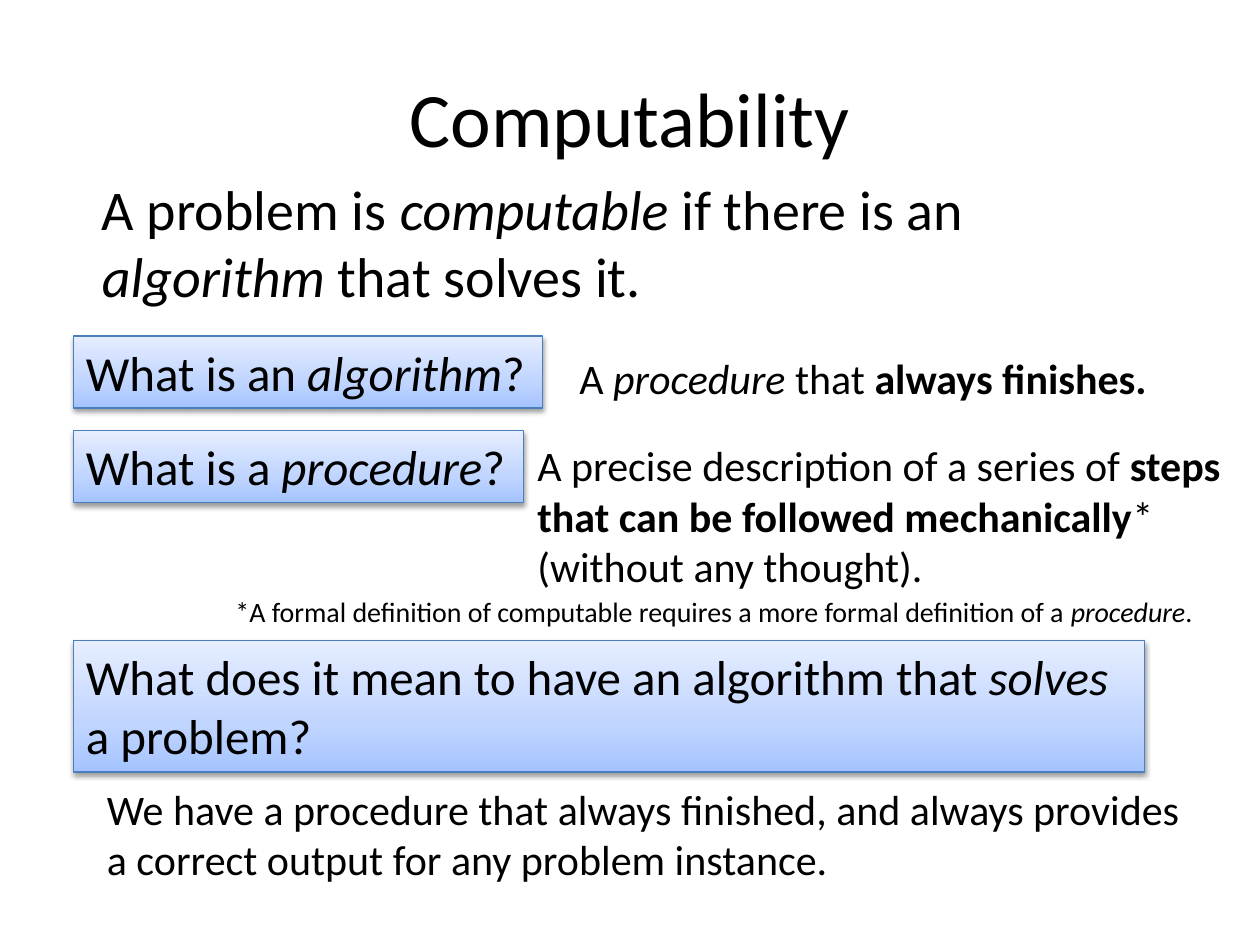
from copy import deepcopy

from lxml import etree
from pptx import Presentation
from pptx import util as u
from pptx.dml import color
from pptx.enum import shapes, text
from pptx.oxml import ns

Pt = u.Pt


def hex_color(value):
    return color.RGBColor.from_string(value)


def write(box, paragraphs, size, wrap=True):
    """Fill a box with paragraphs of (words, style) runs; style is "", "i" or "b"."""
    frame = box.text_frame
    frame.word_wrap = wrap
    frame.vertical_anchor = text.MSO_ANCHOR.TOP
    for index, runs in enumerate(paragraphs):
        para = frame.add_paragraph() if index else frame.paragraphs[0]
        para.alignment = text.PP_ALIGN.LEFT
        for words, style in runs:
            span = para.add_run()
            span.text = words
            span.font.name = "Calibri"
            span.font.size = Pt(size)
            span.font.italic = style == "i"
            span.font.bold = style == "b"
            span.font.color.rgb = hex_color("000000")
    return frame


deck = Presentation()
deck.slide_width, deck.slide_height = Pt(720), Pt(540)
page = deck.slides.add_slide(deck.slide_layouts[6])

# Title and definition
title = page.shapes.add_textbox(Pt(36), Pt(21.6), Pt(648), Pt(90))
title_frame = write(title, [[("Computability", "")]], 44)
title_frame.vertical_anchor = text.MSO_ANCHOR.MIDDLE
title_frame.paragraphs[0].alignment = text.PP_ALIGN.CENTER

definition = page.shapes.add_textbox(Pt(24), Pt(96), Pt(648), Pt(356.4))
definition_frame = write(definition, [[
    ("A problem is ", ""), ("computable", "i"), (" if there is an ", ""),
    ("algorithm ", "i"), ("that solves it.", "")]], 32)
definition_frame.margin_left = Pt(34.2)

# Questions: top, width, height, wrap, runs
questions = [
    (192, 268, 41.2, False,
     [("What is an ", ""), ("algorithm", "i"), ("?", "")]),
    (246, 257, 41.2, False,
     [("What is a ", ""), ("procedure", "i"), ("?", "")]),
    (366, 612, 75.1, True,
     [("What does it mean to have an algorithm that ", ""),
      ("solves", "i"), (" a problem?", "")]),
]
gradient = [(0, "A4C4FF"), (0.35, "BFD4FF"), (1, "E6EEFF")]

for top, width, height, wrap, runs in questions:
    question = page.shapes.add_shape(
        shapes.MSO_SHAPE.RECTANGLE, Pt(42), Pt(top), Pt(width), Pt(height))
    question.fill.gradient()
    question.fill.gradient_angle = 90
    stop_list = question.element.spPr.find(".//" + ns.qn("a:gsLst"))
    stop_list.append(deepcopy(stop_list[-1]))
    for stop, (position, shade) in zip(question.fill.gradient_stops, gradient):
        stop.position = position
        stop.color.rgb = hex_color(shade)
    question.line.color.rgb = hex_color("4B7EBC")
    question.line.width = Pt(0.75)

    question.shadow.inherit = False
    effects = question.element.spPr.find(ns.qn("a:effectLst"))
    shadow = etree.SubElement(
        effects, ns.qn("a:outerShdw"), blurRad=str(Pt(3.1)),
        dist=str(Pt(1.6)), dir="5400000", rotWithShape="0")
    shadow_color = etree.SubElement(shadow, ns.qn("a:srgbClr"), val="000000")
    etree.SubElement(shadow_color, ns.qn("a:alpha"), val="38000")
    write(question, [runs], 28, wrap)

# Answers and footnote: left, top, width, height, size, wrap, paragraphs
answers = [
    (324, 198, 342.7, 36.3, 24, False,
     [[("A ", ""), ("procedure", "i"), (" that ", ""),
       ("always finishes.", "b")]]),
    (300, 247.7, 408, 94.5, 24, True,
     [[("A precise description of a series of ", ""),
       ("steps that can be followed mechanically", "b"),
       ("* (without any thought).", "")]]),
    (127.5, 336.2, 568.8, 26.6, 16, False,
     [[("*A formal definition of computable requires a more formal "
        "definition of a ", ""), ("procedure", "i"), (".", "")]]),
    (54, 444, 639.4, 65.4, 24, False,
     [[("We have a procedure that always finished, and always provides", "")],
      [("a correct output for any problem instance.", "")]]),
]
for left, top, width, height, size, wrap, paragraphs in answers:
    answer = page.shapes.add_textbox(Pt(left), Pt(top), Pt(width), Pt(height))
    write(answer, paragraphs, size, wrap)

deck.save("out.pptx")
